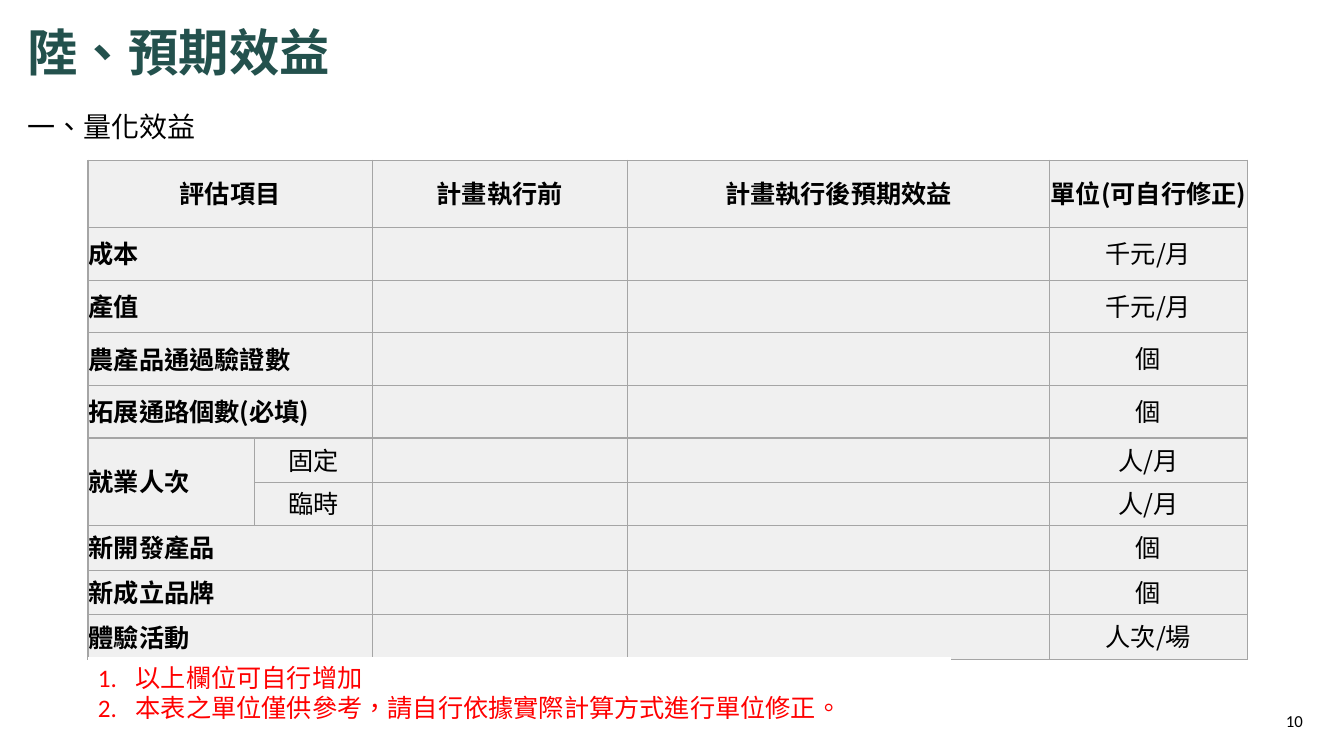
from lxml import etree
from pptx import Presentation
from pptx.dml.color import RGBColor
from pptx.enum.shapes import MSO_SHAPE
from pptx.enum.text import MSO_ANCHOR, PP_ALIGN
from pptx.oxml.ns import qn
from pptx.util import Pt

RECTANGLE = MSO_SHAPE.RECTANGLE
TOP, MIDDLE = MSO_ANCHOR.TOP, MSO_ANCHOR.MIDDLE
LEFT, CENTER = PP_ALIGN.LEFT, PP_ALIGN.CENTER

TITLE = "陸、預期效益"
SUBTITLE = "一、量化效益"
PAGE_NUMBER = "10"
HEADERS = ("評估項目", "", "計畫執行前", "計畫執行後預期效益", "單位(可自行修正)")
INDICATORS = [
    ("成本", "", "千元/月"),
    ("產值", "", "千元/月"),
    ("農產品通過驗證數", "", "個"),
    ("拓展通路個數(必填)", "", "個"),
    ("就業人次", "固定", "人/月"),
    ("", "臨時", "人/月"),
    ("新開發產品", "", "個"),
    ("新成立品牌", "", "個"),
    ("體驗活動", "", "人次/場"),
]
NOTES = ["以上欄位可自行增加", "本表之單位僅供參考，請自行依據實際計算方式進行單位修正。"]

THEME = {
    "cjk": "Noto Sans CJK SC", "latin": "Calibri",
    "black": "000000", "title": "23514D", "red": "FF0000", "white": "FFFFFF",
    "cell": "F0F0F0", "border": "A5A5A5",
    "title_size": 36, "subtitle_size": 20, "body_size": 18, "number_size": 12,
}
COLUMN_WIDTHS = (118.8, 84.2, 182.2, 301.7, 141.1)
ROW_HEIGHTS = (37.6,) * 5 + (32, 30.4) + (32,) * 3
TABLE_LEFT, TABLE_TOP = 62.9, 114.5
LINE_PITCH = 24
NOTE_INDENT = 27


def color(name):
    return RGBColor.from_string(THEME[name])


def write(paragraph, text, size, font="cjk", ink="black", bold=False, **layout):
    for name, value in layout.items():
        setattr(paragraph, name, value)
    run = paragraph.add_run()
    run.text = text
    values = {"name": THEME[font], "size": Pt(THEME[size]), "bold": bold}
    for name, value in values.items():
        setattr(run.font, name, value)
    run.font.color.rgb = color(ink)
    properties = run.font._element
    properties.set("lang", "zh-TW")
    etree.SubElement(properties, qn("a:ea"), typeface=THEME[font])


def add_text(slide, box, text, size, **style):
    shape = slide.shapes.add_textbox(*map(Pt, box))
    frame = shape.text_frame
    frame.word_wrap = True
    frame.vertical_anchor = MIDDLE
    write(frame.paragraphs[0], text, size, **style)


def outline(cell):
    properties = cell._tc.get_or_add_tcPr()
    for position, side in enumerate(("lnL", "lnR", "lnT", "lnB")):
        line = etree.Element(qn(f"a:{side}"), w=str(Pt(1)))
        fill = etree.SubElement(line, qn("a:solidFill"))
        etree.SubElement(fill, qn("a:srgbClr"), val=THEME["border"])
        properties.insert(position, line)


def add_table(slide):
    rows = [HEADERS] + [(item, kind, "", "", unit) for item, kind, unit in INDICATORS]
    box = (TABLE_LEFT, TABLE_TOP, sum(COLUMN_WIDTHS), sum(ROW_HEIGHTS))
    table = slide.shapes.add_table(len(rows), len(HEADERS), *map(Pt, box)).table
    for column, width in zip(table.columns, COLUMN_WIDTHS):
        column.width = Pt(width)
    for row, height in zip(table.rows, ROW_HEIGHTS):
        row.height = Pt(height)
    for row_index, values in enumerate(rows):
        for column_index, text in enumerate(values):
            cell = table.cell(row_index, column_index)
            cell.fill.solid()
            cell.fill.fore_color.rgb = color("cell")
            outline(cell)
            cell.vertical_anchor = MIDDLE
            inset = Pt(0.5) if column_index == 0 else 0
            for side in ("left", "right", "top", "bottom"):
                setattr(cell, f"margin_{side}", inset if side != "bottom" else 0)
            paragraph = cell.text_frame.paragraphs[0]
            if text:
                heading = row_index == 0
                item = column_index == 0
                write(paragraph, text, "body_size", bold=heading or item,
                      alignment=LEFT if item and not heading else CENTER,
                      line_spacing=Pt(LINE_PITCH))
            else:
                paragraph.font.size = Pt(THEME["body_size"])
        if values[0] and not values[1]:
            table.cell(row_index, 0).merge(table.cell(row_index, 1))
        elif not values[0]:
            table.cell(row_index - 1, 0).merge(table.cell(row_index, 0))


def add_notes(slide):
    shape = slide.shapes.add_shape(RECTANGLE, *map(Pt, (62.9, 469.4, 616.3, 51)))
    shape.shadow.inherit = False
    shape.fill.solid()
    shape.fill.fore_color.rgb = color("white")
    shape.line.fill.background()
    frame = shape.text_frame
    frame.word_wrap = True
    frame.vertical_anchor = TOP
    for index, note in enumerate(NOTES):
        paragraph = frame.add_paragraph() if index else frame.paragraphs[0]
        properties = paragraph._p.get_or_add_pPr()
        properties.set("marL", str(Pt(NOTE_INDENT)))
        properties.set("indent", str(-Pt(NOTE_INDENT)))
        etree.SubElement(properties, qn("a:buFont"), typeface="+mj-lt")
        etree.SubElement(properties, qn("a:buAutoNum"), type="arabicPeriod")
        write(paragraph, note, "body_size", font="latin", ink="red", alignment=LEFT)


def main():
    presentation = Presentation()
    presentation.slide_width, presentation.slide_height = Pt(960), Pt(540)
    slide = presentation.slides.add_slide(presentation.slide_layouts[6])
    add_text(slide, (12.5, 74, 159, 32), SUBTITLE, "subtitle_size")
    add_table(slide)
    add_text(slide, (12.5, 11, 312, 51), TITLE, "title_size", ink="title", bold=True)
    add_text(slide, (903, 500.5, 43, 29), PAGE_NUMBER, "number_size",
             font="latin", alignment=CENTER)
    add_notes(slide)
    presentation.save("out.pptx")


if __name__ == "__main__":
    main()
